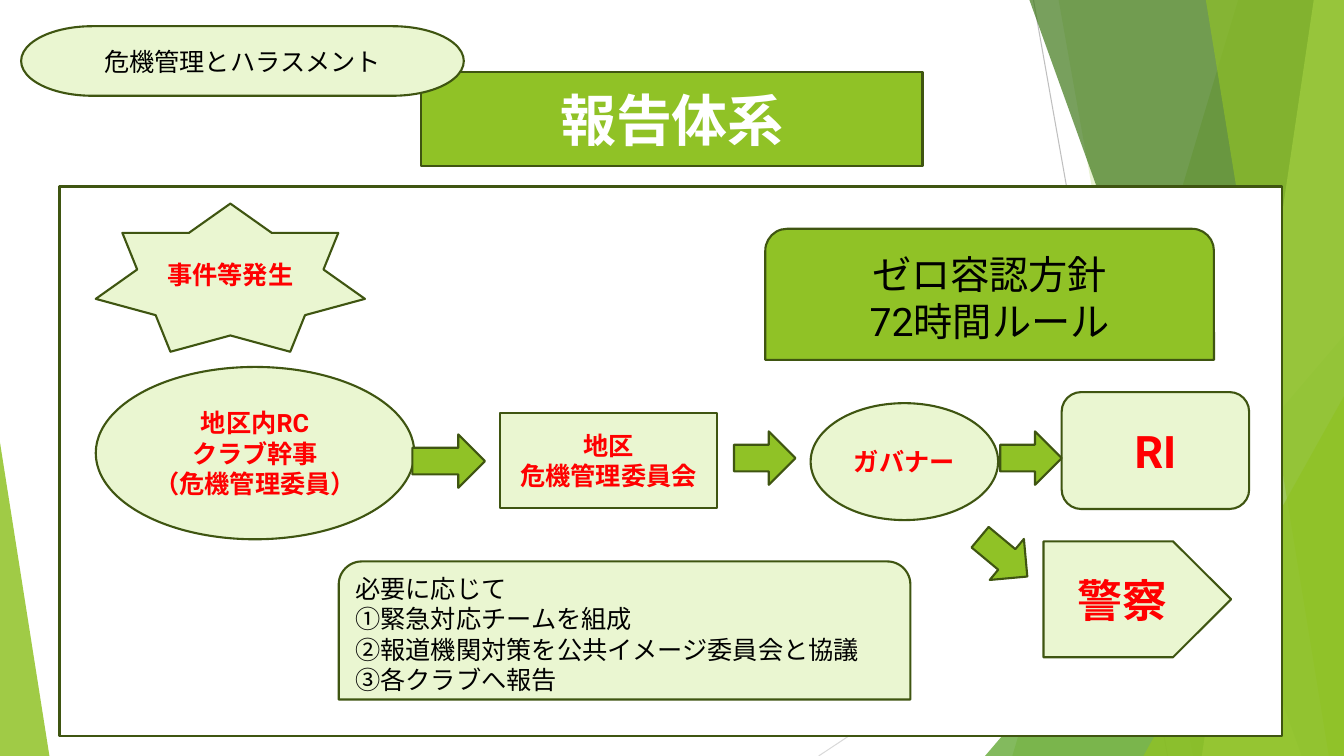
import pptx
import pptx.util
import pptx.dml.color
import pptx.enum.shapes
import pptx.enum.text
import pptx.enum.lang
import pptx.oxml
import pptx.oxml.ns

Inches = pptx.util.Inches
Pt = pptx.util.Pt
SHAPE = pptx.enum.shapes.MSO_SHAPE
ALIGN = pptx.enum.text.PP_ALIGN

COLORS = {
    "green": "90C226", "leaf": "54A021", "forest": "3F7819", "lime": "C0E474",
    "pale": "EAF6D1", "outline": "3F5511", "white": "FFFFFF", "black": "000000",
    "red": "FF0000", "gray": "BFBFBF", "silver": "D9D9D9",
}
WIDTH, HEIGHT = 13.33, 7.5


def rgb(name):
    return pptx.dml.color.RGBColor.from_string(COLORS[name])


class ReportSlide:
    font_name = "Roboto"
    outline_width = 1.5

    def __init__(self, deck):
        self.slide = deck.slides.add_slide(deck.slide_layouts[5])
        self.shapes = self.slide.shapes

    def paint(self, shape, fill, opacity=None):
        shape.fill.solid()
        shape.fill.fore_color.rgb = rgb(fill)
        if opacity is None:
            shape.line.color.rgb = rgb("outline")
            shape.line.width = Pt(self.outline_width)
        else:
            color = shape._element.spPr.find(".//" + pptx.oxml.ns.qn("a:srgbClr"))
            alpha = color.makeelement(pptx.oxml.ns.qn("a:alpha"), {"val": str(opacity * 1000)})
            color.append(alpha)
            shape.line.fill.background()

    def fill_text(self, shape, text, size, color, bold, align=ALIGN.CENTER):
        frame = shape.text_frame
        frame.text = text
        frame_format = {
            "word_wrap": True,
            "auto_size": pptx.enum.text.MSO_AUTO_SIZE.NONE,
            "vertical_anchor": pptx.enum.text.MSO_ANCHOR.MIDDLE,
        }
        for key, value in frame_format.items():
            setattr(frame, key, value)
        font_format = {
            "name": self.font_name, "size": Pt(size), "bold": bold,
            "language_id": pptx.enum.lang.MSO_LANGUAGE_ID.JAPANESE,
        }
        for paragraph in frame.paragraphs:
            paragraph.alignment = align
            for run in paragraph.runs:
                for key, value in font_format.items():
                    setattr(run.font, key, value)
                run.font.color.rgb = rgb(color)

    def title(self, text, box):
        heading = self.shapes.title
        for key, value in zip(("left", "top", "width", "height"), box):
            setattr(heading, key, Inches(value))
        self.paint(heading, "green")
        self.fill_text(heading, text, 40, "white", True)

    def block(self, kind, box, fill, opacity=None):
        shape = self.shapes.add_shape(kind, *map(Inches, box))
        shape.shadow.inherit = False
        self.paint(shape, fill, opacity)
        return shape

    def label(self, kind, box, text, size=18, color="red", bold=True,
              fill="pale", align=ALIGN.CENTER):
        self.fill_text(self.block(kind, box, fill), text, size, color, bold, align)

    def arrow(self, box, rotation=0):
        self.block(SHAPE.RIGHT_ARROW, box, "green").rotation = rotation

    def triangle(self, box, fill, opacity, apex):
        self.block(SHAPE.ISOSCELES_TRIANGLE, box, fill, opacity).adjustments[0] = apex

    def band(self, top_x, bottom_x, fill, opacity):
        corners = [(WIDTH, 0), (WIDTH, HEIGHT), (bottom_x, HEIGHT)]
        outline = self.shapes.build_freeform(Inches(top_x), 0)
        outline.add_line_segments([(Inches(x), Inches(y)) for x, y in corners])
        shape = outline.convert_to_shape()
        shape.shadow.inherit = False
        self.paint(shape, fill, opacity)

    def hairline(self, ends, color):
        line = self.shapes.add_connector(
            pptx.enum.shapes.MSO_CONNECTOR.STRAIGHT, *map(Inches, ends))
        line.line.color.rgb = rgb(color)
        line.line.width = Pt(0.75)
        properties = line._element.spPr
        properties.append(properties.makeelement(pptx.oxml.ns.qn("a:effectLst"), {}))


def draw_backdrop(page):
    page.hairline((10.25, 0, 11.58, HEIGHT), "gray")
    page.hairline((WIDTH, 4.03, 8.12, HEIGHT), "silver")
    page.band(12.28, 10.04, "green", 30)
    page.band(10.5, 11.83, "green", 20)
    page.triangle((9.77, 3.33, 3.56, 4.17), "leaf", 72, 1)
    page.band(10.21, 12.91, "forest", 70)
    page.band(13.03, 11.92, "lime", 70)
    page.band(11.96, 13.18, "green", 65)
    page.triangle((11.34, 3.93, 1.99, 3.57), "green", 80, 1)
    page.triangle((0, 4.39, 0.49, 3.11), "green", 85, 0)


def draw_reporting_flow(page):
    page.block(SHAPE.RECTANGLE, (0.59, 1.85, 12.13, 5.45), "white")
    page.label(SHAPE.OVAL, (0.95, 3.64, 3.16, 1.71),
               "地区内RC\nクラブ幹事\n（危機管理委員）")
    page.arrow((4.09, 4.31, 0.72, 0.53))
    page.label(SHAPE.STAR_7_POINT, (0.95, 2.02, 2.67, 1.47), "事件等発生")
    page.label(SHAPE.RECTANGLE, (4.96, 4.1, 2.15, 0.94), "地区\n危機管理委員会")
    page.label(SHAPE.OVAL, (8.04, 4, 1.86, 1.16), "ガバナー")
    page.label(SHAPE.ROUNDED_RECTANGLE, (10.53, 3.89, 1.86, 1.16), "RI", size=32)
    page.label(SHAPE.PENTAGON, (10.35, 5.37, 1.86, 1.15), "警察", size=32)
    for left, top, rotation in ((7.28, 4.28, 0), (9.92, 4.28, 0), (9.65, 5.26, 39.8)):
        page.arrow((left, top, 0.61, 0.53), rotation)


def draw_notices(page):
    page.label(SHAPE.ROUND_2_SAME_RECTANGLE, (7.59, 2.27, 4.45, 1.3),
               "ゼロ容認方針\n72時間ルール", size=28, color="black", bold=False, fill="green")
    page.label(SHAPE.ROUND_2_SAME_RECTANGLE, (3.36, 5.57, 5.67, 1.37),
               "必要に応じて\n①緊急対応チームを組成\n"
               "②報道機関対策を公共イメージ委員会と協議\n③各クラブへ報告",
               color="black", bold=False, align=ALIGN.LEFT)
    page.label(SHAPE.FLOWCHART_TERMINATOR, (0.21, 0.26, 4.39, 0.69),
               "危機管理とハラスメント", color="black", bold=False)


def main():
    deck = pptx.Presentation()
    deck.slide_width, deck.slide_height = Inches(WIDTH), Inches(HEIGHT)
    page = ReportSlide(deck)
    page.title("報告体系", (4.18, 0.71, 4.97, 0.94))
    draw_backdrop(page)
    draw_reporting_flow(page)
    draw_notices(page)
    deck.save("out.pptx")


if __name__ == "__main__":
    main()
